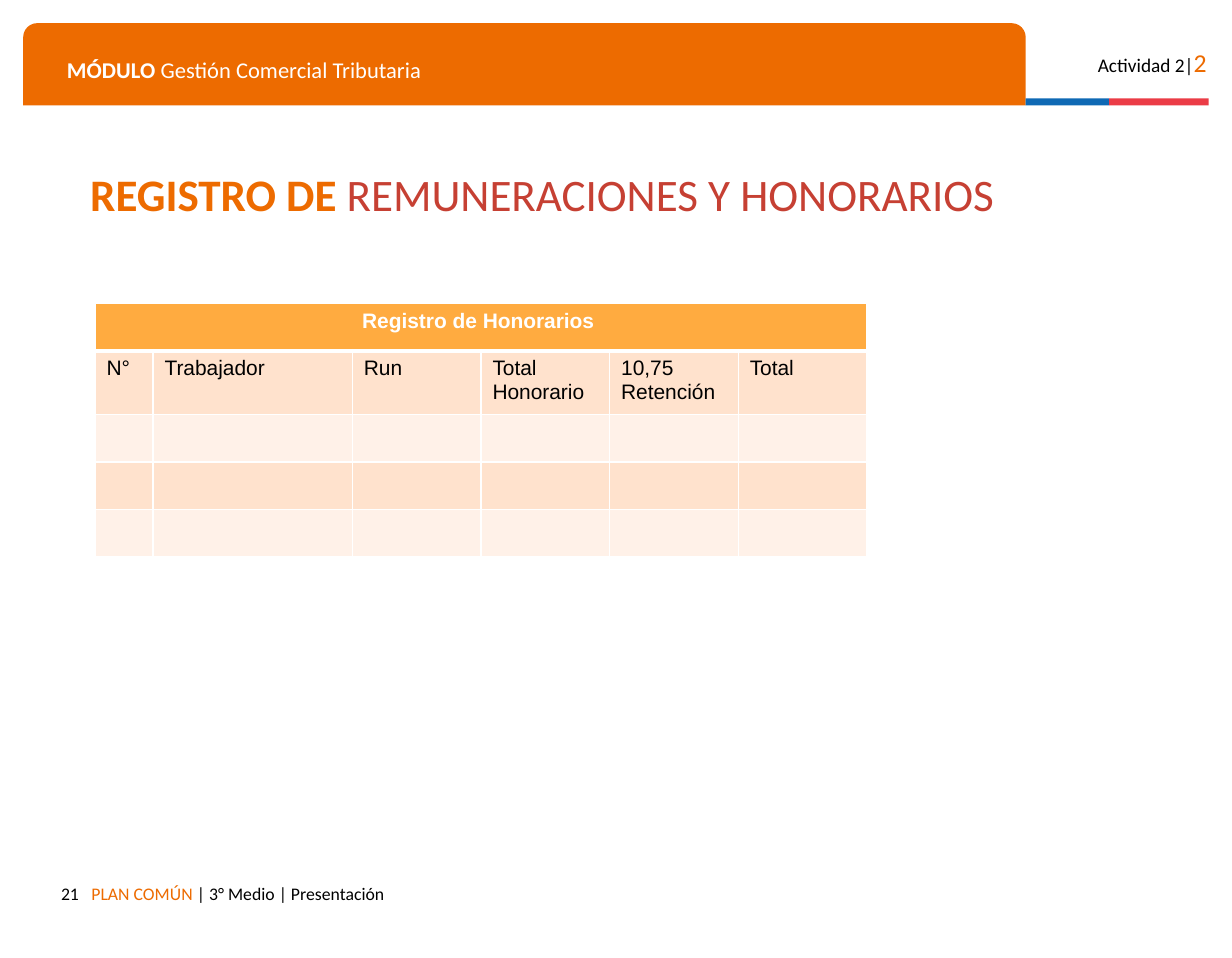
from lxml.etree import SubElement
from pptx import Presentation
from pptx.dml.color import RGBColor
from pptx.enum.shapes import MSO_SHAPE as Shape
from pptx.enum.text import MSO_ANCHOR as Anchor, PP_ALIGN as Align
from pptx.oxml.ns import qn
from pptx.util import Pt

EMU_PER_PX = 9144
COLORS = {
    "orange": "ED6B00", "blue": "0F69B4", "red": "EB3C46", "brick": "C64033",
    "amber": "FFAB40", "peach": "FFE2CD", "cream": "FFF1E8",
    "white": "FFFFFF", "black": "000000",
}
COLUMN_WIDTHS = [50, 172, 111, 111, 111, 111]
ROW_HEIGHTS = [41, 55, 41, 41, 41]
HEADINGS = ["N°", "Trabajador", "Run", "Total Honorario", "10,75 Retención", "Total"]


def px(*lengths):
    return [length * EMU_PER_PX for length in lengths]


def rgb(name):
    return RGBColor.from_string(COLORS[name])


def paint(target, color):
    target.fill.solid()
    target.fill.fore_color.rgb = rgb(color)


def add_run(paragraph, text, size=13, color="black", bold=False, font="Calibri"):
    run = paragraph.add_run()
    run.text = text
    run.font.name = font
    run.font.size = Pt(size)
    run.font.bold = bold
    run.font.color.rgb = rgb(color)


def add_band(slide, kind, box, color):
    band = slide.shapes.add_shape(kind, *px(*box))
    band.shadow.inherit = False
    paint(band, color)
    band.line.fill.background()
    return band


def add_label(slide, box, runs, align=Align.LEFT, anchor=Anchor.TOP, spacing=None):
    frame = slide.shapes.add_textbox(*px(*box)).text_frame
    frame.word_wrap = True
    frame.vertical_anchor = anchor
    frame.margin_left, frame.margin_top, frame.margin_right, frame.margin_bottom = px(10, 10, 10, 10)
    paragraph = frame.paragraphs[0]
    paragraph.alignment = align
    paragraph.line_spacing = spacing
    for text, style in runs:
        add_run(paragraph, text, **style)


def set_borders(cell, top=1, bottom=1):
    properties = cell._tc.get_or_add_tcPr()
    for side, width in {"L": 1, "R": 1, "T": top, "B": bottom}.items():
        border = SubElement(properties, qn(f"a:ln{side}"), w=str(Pt(width)))
        fill = SubElement(border, qn("a:solidFill"))
        SubElement(fill, qn("a:srgbClr"), val=COLORS["white"])


def add_fee_register(slide):
    size = sum(COLUMN_WIDTHS), sum(ROW_HEIGHTS)
    register = slide.shapes.add_table(
        len(ROW_HEIGHTS), len(COLUMN_WIDTHS), *px(82, 262, *size)).table
    for column, width in zip(register.columns, px(*COLUMN_WIDTHS)):
        column.width = width
    for index, (row, height) in enumerate(zip(register.rows, px(*ROW_HEIGHTS))):
        row.height = height
        color = "amber" if index == 0 else ("cream", "peach")[index % 2]
        for cell in row.cells:
            set_borders(cell, top=3 if index == 1 else 1, bottom=3 if index == 0 else 1)
            paint(cell, color)

    title = register.cell(0, 0)
    title.merge(register.cell(0, len(COLUMN_WIDTHS) - 1))
    title_line = title.text_frame.paragraphs[0]
    title_line.alignment = Align.CENTER
    add_run(title_line, "Registro de Honorarios ", color="white", bold=True, font="Arial")
    for cell, heading in zip(register.rows[1].cells, HEADINGS):
        add_run(cell.text_frame.paragraphs[0], heading, font="Arial")


def main():
    presentation = Presentation()
    presentation.slide_width, presentation.slide_height = px(1063, 827)
    slide = presentation.slides.add_slide(presentation.slide_layouts[6])

    header = add_band(slide, Shape.ROUND_2_SAME_RECTANGLE, (20, 20, 865, 71), "orange")
    header.adjustments[0] = 0.17
    add_band(slide, Shape.RECTANGLE, (885, 85, 72, 6), "blue")
    add_band(slide, Shape.RECTANGLE, (957, 85, 86, 6), "red")

    add_label(slide, (48, 38, 814, 35), [
        ("MÓDULO", dict(size=14, color="white", bold=True)),
        (" Gestión Comercial Tributaria", dict(size=14, color="white")),
    ])
    add_label(slide, (923, 30, 128, 38), [
        ("Actividad 2|", dict(size=12)),
        ("2", dict(size=16, color="orange")),
    ], align=Align.RIGHT)
    add_label(slide, (20, 753, 58, 29), [("21", dict(size=11))], align=Align.RIGHT)
    add_label(slide, (69, 753, 714, 38), [
        ("PLAN COMÚN ", dict(size=11, color="orange")),
        ("| 3° Medio | Presentación", dict(size=11)),
    ])
    add_label(slide, (68, 154, 979, 35), [
        ("REGISTRO DE ", dict(size=28, color="orange", bold=True)),
        ("REMUNERACIONES Y HONORARIOS", dict(size=28, color="brick")),
    ], anchor=Anchor.MIDDLE, spacing=0.8)
    add_fee_register(slide)

    presentation.save("out.pptx")


if __name__ == "__main__":
    main()
